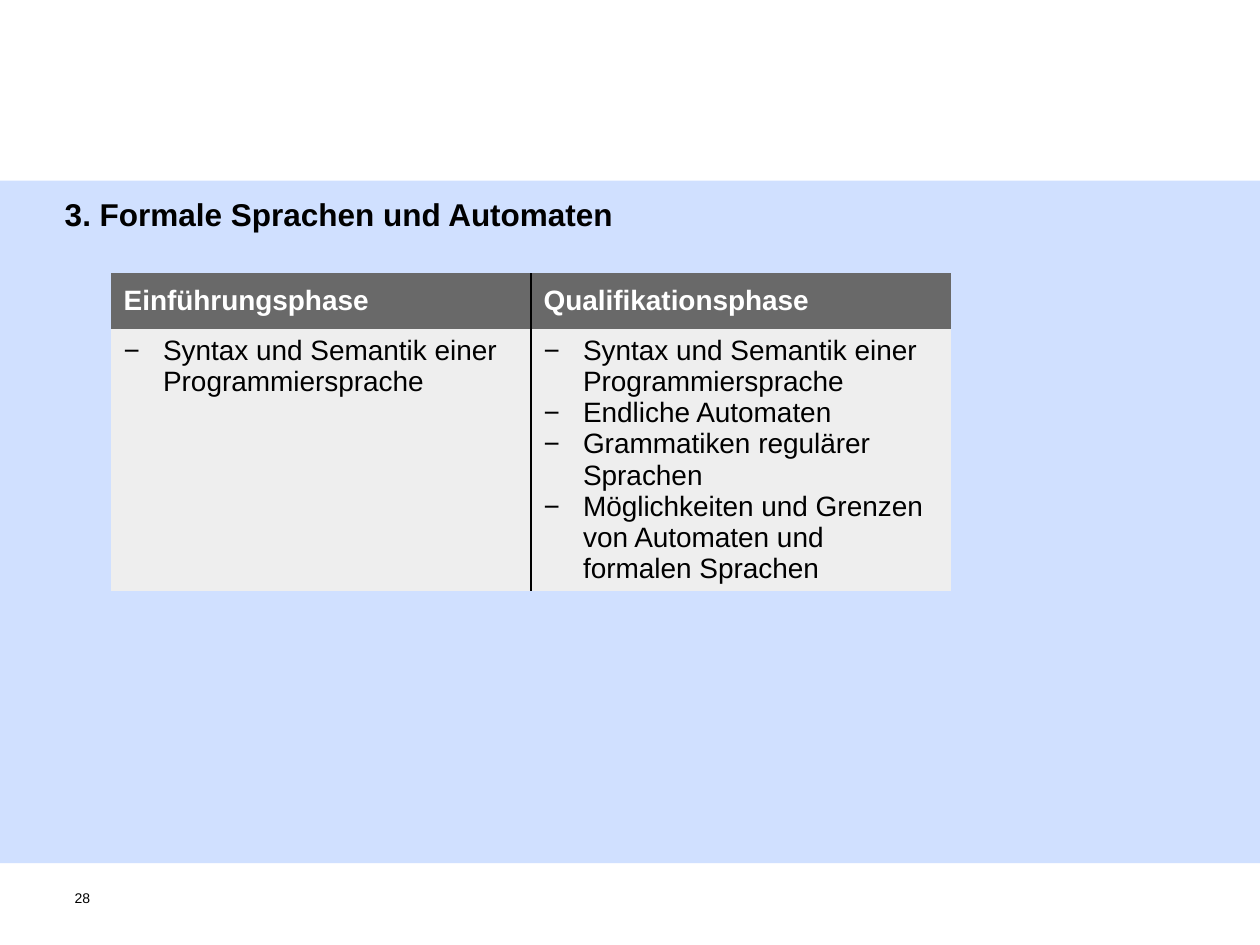
from lxml import etree
from pptx import Presentation
from pptx.dml.color import RGBColor
from pptx.enum.shapes import MSO_SHAPE
from pptx.enum.text import MSO_ANCHOR, MSO_AUTO_SIZE, PP_ALIGN
from pptx.oxml.ns import qn
from pptx.util import Pt

RECT = MSO_SHAPE.RECTANGLE
TOP, MIDDLE = MSO_ANCHOR.TOP, MSO_ANCHOR.MIDDLE
NO_FIT = MSO_AUTO_SIZE.NONE
LEFT = PP_ALIGN.LEFT

BLACK = RGBColor(0x00, 0x00, 0x00)
WHITE = RGBColor(0xFF, 0xFF, 0xFF)
BAND = RGBColor(0x66, 0x99, 0xFF)
HEADER = RGBColor(0x69, 0x69, 0x69)
BODY = RGBColor(0xEE, 0xEE, 0xEE)

FONT = "Arial"
INDENT = Pt(22.5)
COLUMNS = [
    ("Einführungsphase", ["Syntax und Semantik einer Programmiersprache"]),
    ("Qualifikationsphase", [
        "Syntax und Semantik einer Programmiersprache",
        "Endliche Automaten",
        "Grammatiken regulärer Sprachen",
        "Möglichkeiten und Grenzen von Automaten und formalen Sprachen",
    ]),
]


def format_font(font, size, color=BLACK, bold=False):
    """Set typeface, size, colour and weight."""
    font.name = FONT
    font.size = Pt(size)
    font.bold = bold
    font.color.rgb = color


def set_text(sp, text, size, bold=False, top=0):
    """Fill a shape with one left-aligned line, without side margins."""
    tf = sp.text_frame
    tf.text = text
    tf.word_wrap = True
    tf.auto_size = NO_FIT
    tf.vertical_anchor = TOP
    tf.margin_left = tf.margin_right = tf.margin_bottom = 0
    tf.margin_top = Pt(top)
    p = tf.paragraphs[0]
    p.alignment = LEFT
    format_font(p.runs[0].font, size, bold=bold)


def add_band(s):
    """Add the translucent band behind the title and the table."""
    sp = s.shapes.add_shape(RECT, 0, Pt(103.3), Pt(720), Pt(390))
    sp.shadow.inherit = False
    sp.fill.solid()
    sp.fill.fore_color.rgb = BAND
    color = sp.element.spPr.find(f"{qn('a:solidFill')}/{qn('a:srgbClr')}")
    etree.SubElement(color, qn("a:alpha"), val="30000")
    sp.line.fill.background()
    s.shapes.title.element.addprevious(sp.element)


def add_title(s, text):
    """Place and format the title placeholder."""
    sp = s.shapes.title
    sp.left, sp.top, sp.width, sp.height = Pt(37), Pt(100), Pt(635), Pt(44)
    set_text(sp, text, 18, bold=True, top=11.5)


def add_page_number(s, text):
    """Add the page number at the bottom left."""
    sp = s.shapes.add_textbox(Pt(42.6), Pt(508.3), Pt(23), Pt(26.6))
    set_text(sp, text, 8)


def set_borders(cell, black_sides):
    """Draw black lines on the given sides and none on the others."""
    tc_pr = cell._tc.get_or_add_tcPr()
    for i, side in enumerate("LRTB"):
        ln = etree.Element(qn(f"a:ln{side}"), w=str(Pt(1)))
        if side in black_sides:
            fill = etree.SubElement(ln, qn("a:solidFill"))
            etree.SubElement(fill, qn("a:srgbClr"), val=str(BLACK))
        else:
            etree.SubElement(ln, qn("a:noFill"))
        tc_pr.insert(i, ln)


def set_bullet(p):
    """Give a paragraph a hanging minus sign."""
    p_pr = p._p.get_or_add_pPr()
    p_pr.set("marL", str(INDENT))
    p_pr.set("indent", str(-INDENT))
    etree.SubElement(p_pr, qn("a:buFont"), typeface=FONT)
    etree.SubElement(p_pr, qn("a:buChar"), char="−")


def fill_cell(cell, lines, fill, color, side, header):
    """Write a header or a bulleted list into a cell."""
    cell.fill.solid()
    cell.fill.fore_color.rgb = fill
    cell.vertical_anchor = MIDDLE if header else TOP
    set_borders(cell, side)
    cell.text_frame.text = "\n".join(lines)
    for p in cell.text_frame.paragraphs:
        if not header:
            set_bullet(p)
        format_font(p.runs[0].font, 16, color, header)


def add_phase_table(s):
    """Add the table with one column for each phase."""
    heights = (32, 149)
    table = s.shapes.add_table(2, len(COLUMNS), Pt(63.5), Pt(156.1),
                               Pt(480), Pt(sum(heights))).table
    table.horz_banding = False
    for row, height in zip(table.rows, heights):
        row.height = Pt(height)
    for col, ((head, items), side) in enumerate(zip(COLUMNS, "RL")):
        fill_cell(table.cell(0, col), [head], HEADER, WHITE, side, True)
        fill_cell(table.cell(1, col), items, BODY, BLACK, side, False)


def main():
    """Build the slide and save it."""
    prs = Presentation()
    prs.slide_width, prs.slide_height = Pt(720), Pt(540)
    s = prs.slides.add_slide(prs.slide_layouts[5])
    add_band(s)
    add_title(s, "3. Formale Sprachen und Automaten")
    add_phase_table(s)
    add_page_number(s, "28")
    prs.save("out.pptx")


if __name__ == "__main__":
    main()
